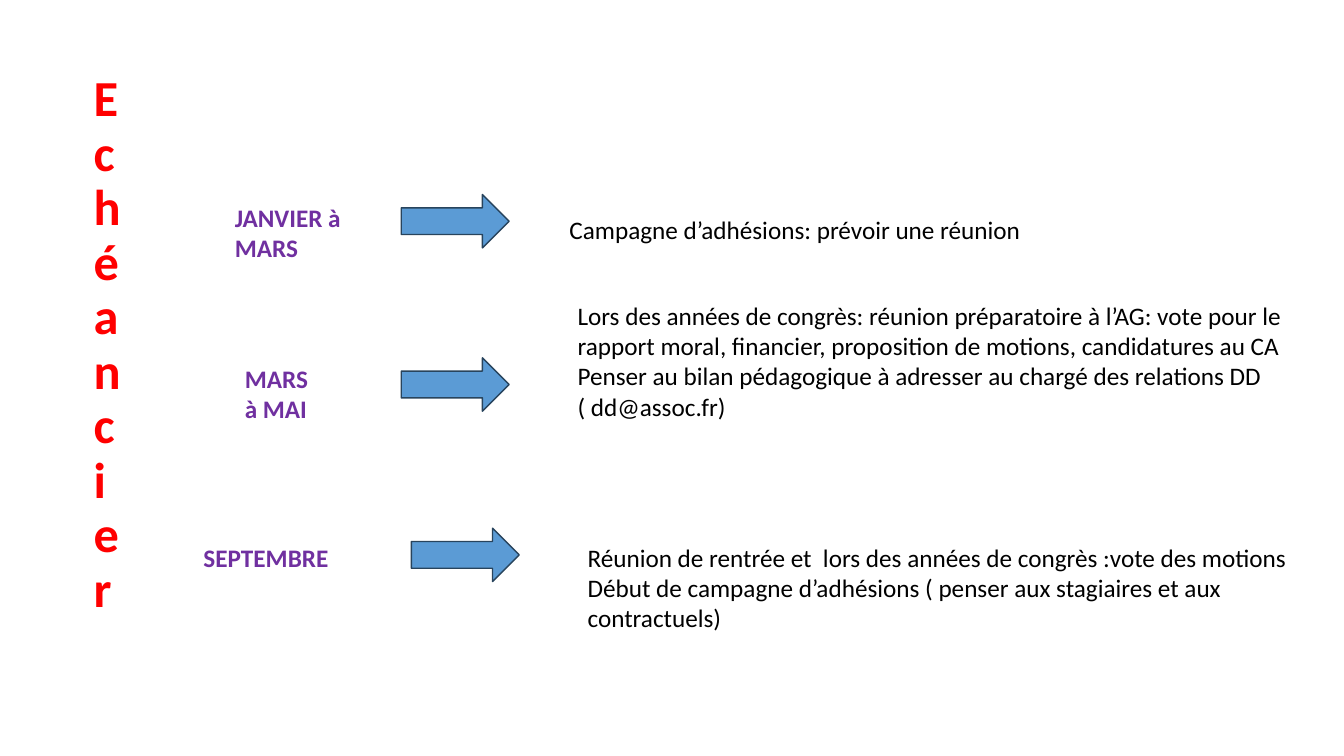
from dataclasses import dataclass

from pptx import Presentation
from pptx.dml.color import RGBColor
from pptx.enum.shapes import MSO_SHAPE
from pptx.enum.text import MSO_ANCHOR
from pptx.util import Inches, Pt

RIGHT_ARROW = MSO_SHAPE.RIGHT_ARROW
TOP = MSO_ANCHOR.TOP
MIDDLE = MSO_ANCHOR.MIDDLE
BLANK_LAYOUT = 6


@dataclass(frozen=True)
class Theme:
    font: str = "Calibri"
    title_size: int = 36
    body_size: int = 18
    title_color: str = "FF0000"
    period_color: str = "7030A0"
    body_color: str = "000000"
    arrow_fill: str = "5B9BD5"
    arrow_line: str = "28445D"


class ScheduleSlide:
    def __init__(self, slide, theme):
        self.slide = slide
        self.theme = theme

    def text(self, box, content, size, color, bold=False, anchor=TOP, line_spacing=1.0):
        shape = self.slide.shapes.add_textbox(*map(Inches, box))
        frame = shape.text_frame
        frame.word_wrap = True
        frame.vertical_anchor = anchor
        frame.text = content
        for paragraph in frame.paragraphs:
            paragraph.line_spacing = line_spacing
            for run in paragraph.runs:
                run.font.name = self.theme.font
                run.font.size = Pt(size)
                run.font.bold = bold
                run.font.color.rgb = RGBColor.from_string(color)

    def title(self, box, word):
        self.text(box, "\v".join(word), self.theme.title_size,
                  self.theme.title_color, True, MIDDLE, 0.9)

    def period(self, box, content):
        self.text(box, content, self.theme.body_size, self.theme.period_color, True)

    def tasks(self, box, content):
        self.text(box, content, self.theme.body_size, self.theme.body_color)

    def arrow(self, left, top):
        shape = self.slide.shapes.add_shape(
            RIGHT_ARROW, Inches(left), Inches(top), Inches(1.07), Inches(0.53))
        shape.shadow.inherit = False
        shape.fill.solid()
        shape.fill.fore_color.rgb = RGBColor.from_string(self.theme.arrow_fill)
        shape.line.color.rgb = RGBColor.from_string(self.theme.arrow_line)
        shape.line.width = Pt(1)


SCHEDULE = [
    ((2.23, 1.96, 1.65, 0.71), "JANVIER à MARS",
     (3.98, 1.93),
     (5.55, 2.08, 7.46, 0.4), "Campagne d’adhésions: prévoir une réunion"),
    ((2.33, 3.55, 1.65, 0.71), "MARS\nà MAI",
     (3.98, 3.55),
     (5.63, 2.93, 7.46, 1.92),
     "Lors des années de congrès: réunion préparatoire à l’AG: vote pour le "
     "rapport moral, financier, proposition de motions, candidatures au CA\n"
     "Penser au bilan pédagogique à adresser au chargé des relations DD "
     "( dd@assoc.fr)"),
    ((1.92, 5.33, 1.93, 0.4), "SEPTEMBRE",
     (4.08, 5.24),
     (5.73, 5.33, 7.46, 1.31),
     "Réunion de rentrée et  lors des années de congrès :vote des motions\n"
     "Début de campagne d’adhésions ( penser aux stagiaires et aux contractuels)"),
]


def main():
    presentation = Presentation()
    presentation.slide_width = Inches(13.33)
    presentation.slide_height = Inches(7.5)
    slide = presentation.slides.add_slide(presentation.slide_layouts[BLANK_LAYOUT])
    schedule = ScheduleSlide(slide, Theme())
    schedule.title((0.83, 0.83, 0.94, 5.2), "Echéancier")
    for period_box, period, arrow_position, tasks_box, tasks in SCHEDULE:
        schedule.period(period_box, period)
        schedule.arrow(*arrow_position)
        schedule.tasks(tasks_box, tasks)
    presentation.save("out.pptx")


if __name__ == "__main__":
    main()
